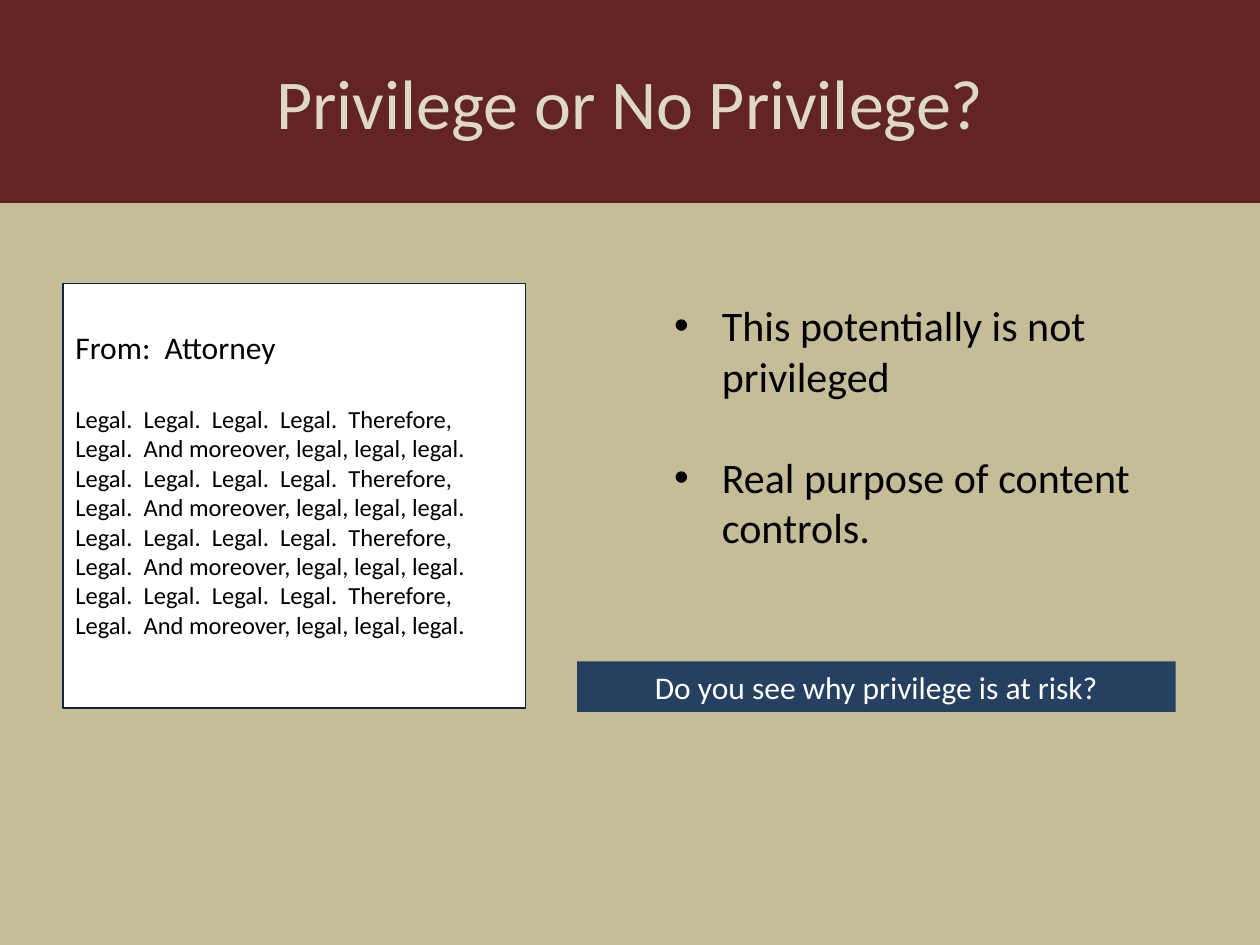
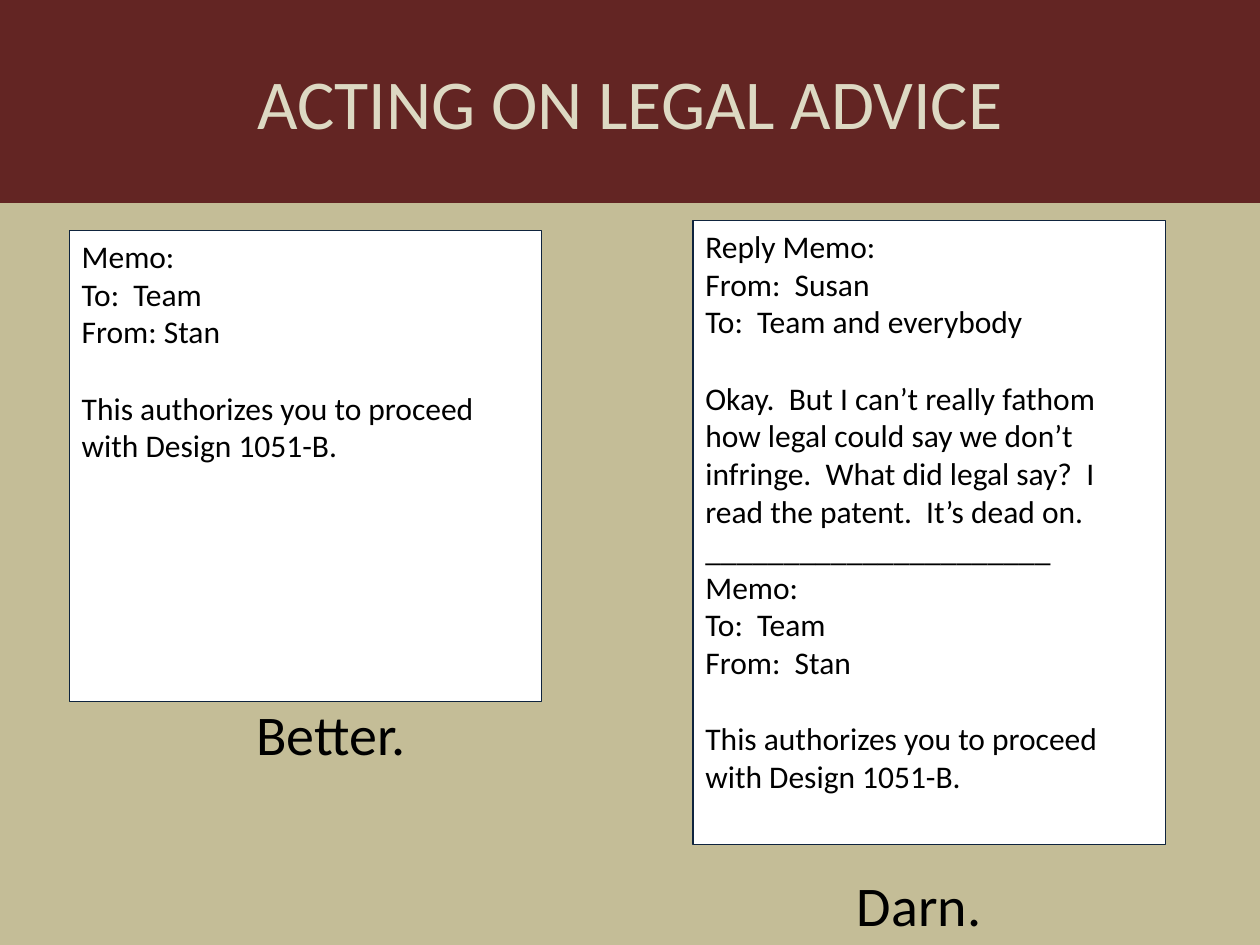
from pptx import Presentation
from pptx.dml.color import RGBColor
from pptx.enum.shapes import MSO_SHAPE
from pptx.enum.text import MSO_ANCHOR, MSO_AUTO_SIZE, PP_ALIGN
from pptx.util import Inches, Pt

FONT = "Calibri"
BAND, TITLE_TEXT, SAND = "632523", "DDD9C3", "C4BD97"
PAPER, PAPER_EDGE, INK, NAVY = "FFFFFF", "0F243E", "000000", "254061"
LINE_HEIGHT = 1.22  # one line of text as a multiple of its size

presentation = Presentation()
presentation.slide_width = Inches(10)
presentation.slide_height = Inches(7.5)
CELL = presentation.slide_width / 40  # the grid has 40 columns and 30 rows


def paint(target, color):
    """Give a fill or a line fill one plain colour."""
    target.solid()
    target.fore_color.rgb = RGBColor.from_string(color)


def place(shape, box, groups, size, color=INK, align=PP_ALIGN.LEFT,
          anchor=MSO_ANCHOR.TOP):
    """Set a shape on the grid and write its groups of paragraphs, a line apart."""
    shape.left, shape.top, shape.width, shape.height = (
        round(cells * CELL) for cells in box)
    frame = shape.text_frame
    frame.word_wrap = True
    frame.auto_size = MSO_AUTO_SIZE.NONE
    frame.vertical_anchor = anchor
    lines = [(group, line) for group in groups for line in group]
    frame.text = "\n".join(line for _, line in lines)
    for index, (paragraph, (group, line)) in enumerate(zip(frame.paragraphs, lines)):
        starts_group = index > 0 and lines[index - 1][0] is not group
        paragraph.space_before = Pt(round(size * LINE_HEIGHT) if starts_group else 0)
        paragraph.alignment = align
        paragraph.font.name = FONT
        paragraph.font.size = Pt(size)
        paragraph.font.color.rgb = RGBColor.from_string(color)


# Shared background
paint(presentation.slide_master.background.fill, SAND)

# Slides with their title bands
slides = []
for layout, title in ((1, "Privilege or No Privilege?"), (5, "ACTING ON LEGAL ADVICE")):
    slide = presentation.slides.add_slide(presentation.slide_layouts[layout])
    paint(slide.shapes.title.fill, BAND)
    place(slide.shapes.title, (0, 0, 40, 6.44), [[title]], 40, TITLE_TEXT,
          PP_ALIGN.CENTER, MSO_ANCHOR.MIDDLE)
    slides.append(slide)
privilege_slide, advice_slide = slides

# Sheets of paper on both slides
legal_text = "Legal.  Legal.  Legal.  Legal.  Therefore, Legal.  And moreover, legal, legal, legal."
authorization = ["This authorizes you to proceed with Design 1051-B."]
reply = ("Okay.  But I can’t really fathom how legal could say we don’t infringe.  "
         "What did legal say?  I read the patent.  It’s dead on.")
sheets = [
    (privilege_slide, (2, 9, 14.68, 13.48), [["From:  Attorney"], [legal_text] * 4]),
    (advice_slide, (2.2, 7.32, 15, 14.96),
     [["Memo:", "To:  Team", "From: Stan"], authorization]),
    (advice_slide, (22, 7, 15, 19.8),
     [["Reply Memo:", "From:  Susan", "To:  Team and everybody"],
      [reply, "_" * 22, "Memo:", "To:  Team", "From:  Stan"],
      authorization]),
]
for slide, box, groups in sheets:
    sheet = slide.shapes.add_shape(MSO_SHAPE.RECTANGLE, 0, 0, 0, 0)
    sheet.shadow.inherit = False
    paint(sheet.fill, PAPER)
    paint(sheet.line.fill, PAPER_EDGE)
    sheet.line.width = Pt(0.75)
    place(sheet, box, groups, 18)
    if slide is privilege_slide:
        # The letter starts a line lower and its body is smaller
        sheet.text_frame.margin_top = Inches(0.35)
        for paragraph in sheet.text_frame.paragraphs[1:]:
            paragraph.font.size = Pt(14)

# Bullets on privilege
bullets = privilege_slide.placeholders[1]
place(bullets, (21, 9.32, 16, 8.48),
      [["This potentially is not privileged"], ["Real purpose of content controls."]], 24)
for paragraph in bullets.text_frame.paragraphs:
    properties = paragraph._p.get_or_add_pPr()
    properties.set("marL", str(Inches(0.38)))
    properties.set("indent", str(Inches(-0.38)))

# Question bar
question = privilege_slide.shapes.add_shape(MSO_SHAPE.RECTANGLE, 0, 0, 0, 0)
question.shadow.inherit = False
paint(question.fill, NAVY)
question.line.fill.background()
place(question, (18.32, 21, 19, 1.6), [["Do you see why privilege is at risk?"]], 18,
      PAPER, PP_ALIGN.CENTER)

# Verdicts below the memos
for verdict, left, top in (("Better.", 3, 22), ("Darn.", 21.68, 27.44)):
    caption = advice_slide.shapes.add_textbox(0, 0, 0, 0)
    place(caption, (left, top, 15, 2.56), [[verdict]], 32, align=PP_ALIGN.CENTER)

presentation.save("out.pptx")
